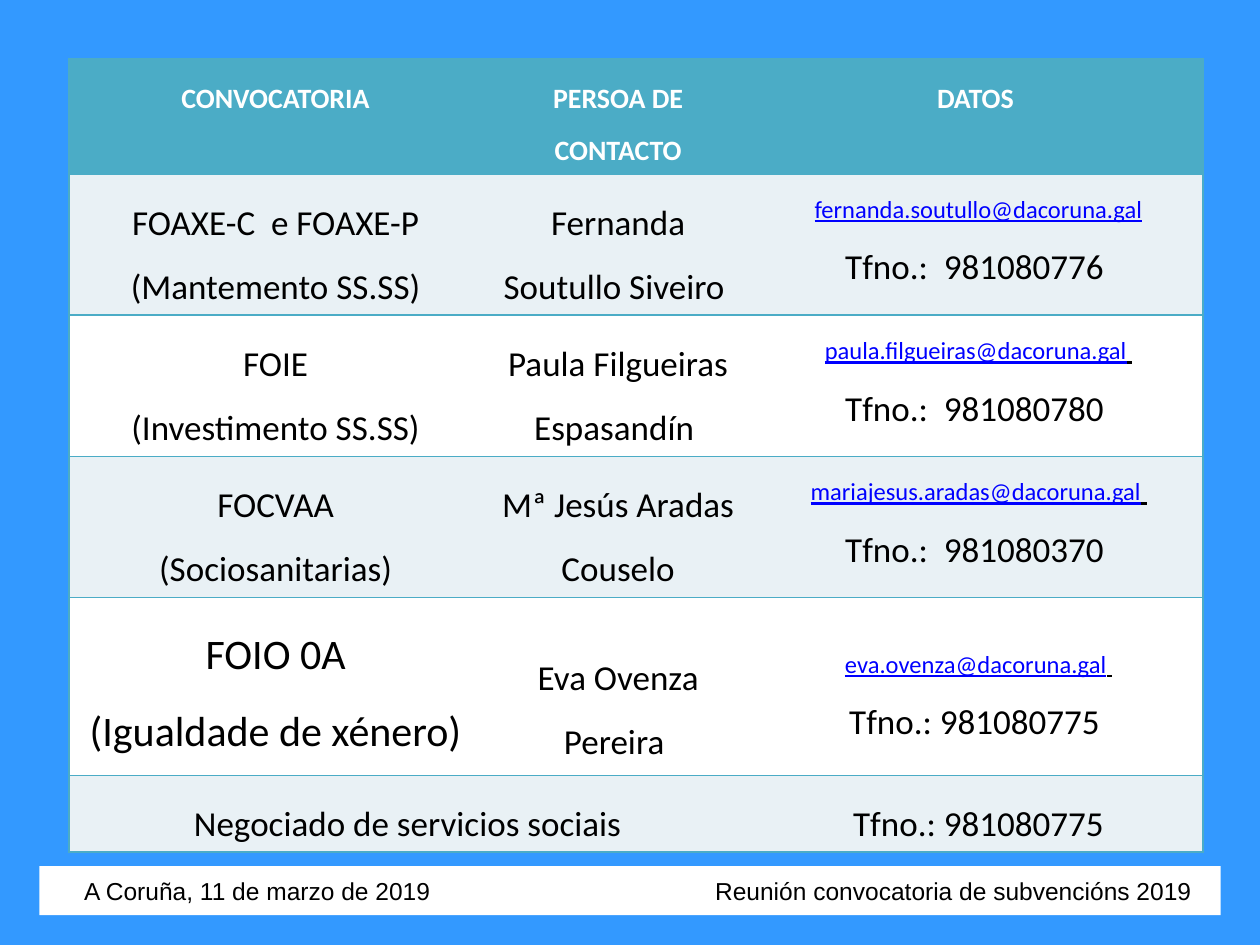
from lxml.etree import SubElement
from pptx import Presentation
from pptx.dml.color import RGBColor
from pptx.enum.shapes import MSO_SHAPE as Shape
from pptx.enum.text import MSO_ANCHOR as Anchor, PP_ALIGN as Align
from pptx.oxml.ns import qn
from pptx.util import Pt

TEAL, PALE, WHITE, BLACK, LINK, BLUE = "4BACC6", "E9F1F5", "FFFFFF", "000000", "0000FF", "3399FF"


def color(value):
    return RGBColor.from_string(value)


class ContactSlide:
    font_name = "Calibri"

    def __init__(self, deck):
        self.page = deck.slides.add_slide(deck.slide_layouts[6])
        fill = self.page.background.fill
        fill.solid()
        fill.fore_color.rgb = color(BLUE)

    def style(self, font, size, tone, bold=False, name=None):
        font.name = name or self.font_name
        font.size = Pt(size)
        font.bold = bold
        font.color.rgb = color(tone)

    def cell_text(self, cell, lines, size, tone, bold):
        frame = cell.text_frame
        for index, line in enumerate(lines):
            para = frame.paragraphs[0] if index == 0 else frame.add_paragraph()
            para.alignment = Align.CENTER
            para.line_spacing = 1.5
            is_mail = "@" in line
            self.style(para.font, 14 if is_mail else size, tone, bold)
            para.font.underline = is_mail
            address = line.rstrip() if is_mail else line
            span = para.add_run()
            span.text = address
            if is_mail:
                span.font.color.rgb = color(LINK)
                if line != address:
                    para.add_run().text = " "

    def borders(self, cell, sides):
        properties = cell._tc.get_or_add_tcPr()
        for side in "LRTB":
            line = SubElement(properties, qn(f"a:ln{side}"), w=str(Pt(1)))
            if side in sides:
                solid = SubElement(line, qn("a:solidFill"))
                SubElement(solid, qn("a:srgbClr"), val=TEAL)
            else:
                SubElement(line, qn("a:noFill"))

    def table(self, left, top, widths, heights, rows):
        frame = self.page.shapes.add_table(
            len(heights), len(widths), Pt(left), Pt(top), Pt(sum(widths)), Pt(sum(heights)))
        table = frame.table
        table.first_row = False
        table.horz_banding = False
        for column, width in zip(table.columns, widths):
            column.width = Pt(width)
        for row, height in zip(table.rows, heights):
            row.height = Pt(height)
        last = len(widths) - 1
        for r, texts in enumerate(rows):
            header = r == 0
            for c, lines in enumerate(texts):
                cell = table.cell(r, c)
                self.borders(cell, "TB" + "L" * (c == 0) + "R" * (c == last))
                cell.fill.solid()
                cell.fill.fore_color.rgb = color(TEAL if header else PALE if r % 2 else WHITE)
                large = lines and lines[0].startswith("FOIO")
                size = 16 if header else 24 if large else 20
                self.cell_text(cell, lines, size, WHITE if header else BLACK, header)
        return table

    def footer(self, left, top, width, height, text, indent, tab):
        box = self.page.shapes.add_shape(Shape.RECTANGLE, Pt(left), Pt(top), Pt(width), Pt(height))
        box.shadow.inherit = False
        box.fill.solid()
        box.fill.fore_color.rgb = color(WHITE)
        box.line.fill.background()
        frame = box.text_frame
        frame.word_wrap = True
        frame.vertical_anchor = Anchor.MIDDLE
        frame.margin_left = Pt(indent)
        para = frame.paragraphs[0]
        para.alignment = Align.LEFT
        para.add_run().text = text
        stops = SubElement(para._p.get_or_add_pPr(), qn("a:tabLst"))
        SubElement(stops, qn("a:tab"), pos=str(Pt(tab)), algn="r")
        self.style(para.font, 14, BLACK, name="Arial")


def main():
    deck = Presentation()
    deck.slide_width, deck.slide_height = Pt(720), Pt(540)
    slide = ContactSlide(deck)
    rows = [
        [["CONVOCATORIA"], ["PERSOA DE CONTACTO"], ["DATOS "]],
        [["FOAXE-C  e FOAXE-P", "(Mantemento SS.SS)"], ["Fernanda Soutullo Siveiro "],
         ["fernanda.soutullo@dacoruna.gal", "Tfno.:  981080776 "]],
        [["FOIE", "(Investimento SS.SS)"], ["Paula Filgueiras Espasandín "],
         ["paula.filgueiras@dacoruna.gal ", "Tfno.:  981080780 "]],
        [["FOCVAA", "(Sociosanitarias)"], ["Mª Jesús Aradas Couselo"],
         ["mariajesus.aradas@dacoruna.gal ", "Tfno.:  981080370 "]],
        [["FOIO 0A", "(Igualdade de xénero)"], ["Eva Ovenza Pereira "],
         ["eva.ovenza@dacoruna.gal ", "Tfno.: 981080775 "]],
        [["Negociado de servicios sociais "], [], ["Tfno.: 981080775"]],
    ]
    table = slide.table(39.5, 33.5, [236, 155.5, 256.5], [38, 79, 79, 79, 101.5, 34], rows)
    table.cell(5, 0).merge(table.cell(5, 1))
    for column in (1, 2):
        table.cell(4, column).margin_top = Pt(21.6)
    slide.footer(22.5, 495, 675, 28,
                 "A Coruña, 11 de marzo de 2019\tReunión convocatoria de subvencións 2019", 25.5, 633)
    deck.save("out.pptx")


if __name__ == "__main__":
    main()
